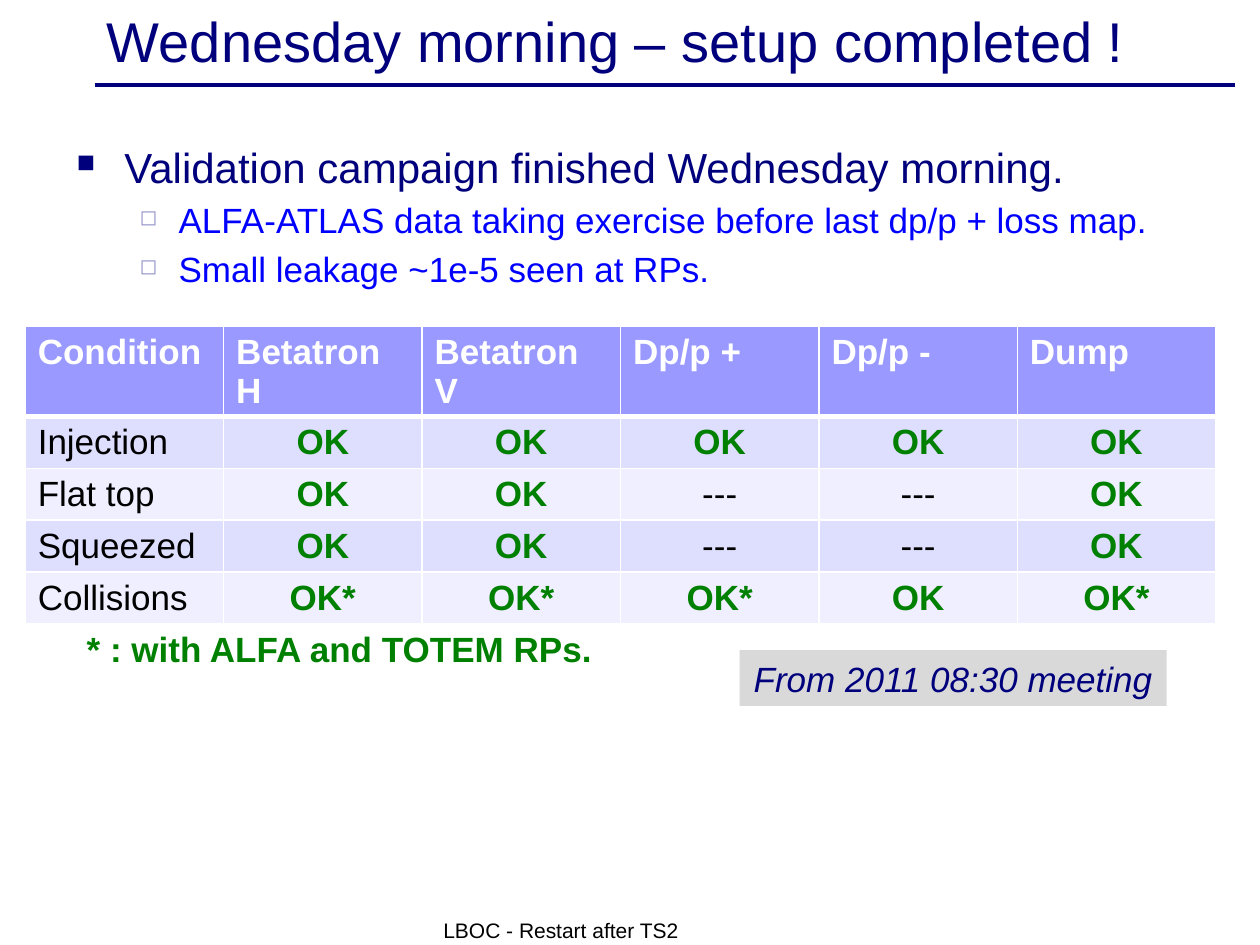
from dataclasses import dataclass

import pptx
import pptx.dml.color
import pptx.enum.shapes
import pptx.enum.text
import pptx.oxml
import pptx.oxml.ns
import pptx.util

WIDTH, HEIGHT = 10, 7.5
FONT = "Arial"
NAVY, BLUE, GREEN = "00007D", "0000FF", "008000"
BLACK, WHITE, GREY = "000000", "FFFFFF", "D9D9D9"
HEADER_FILL, BAND_FILLS = "9999FF", ("DEDEFF", "EFEFFF")
LEFT, CENTER = pptx.enum.text.PP_ALIGN.LEFT, pptx.enum.text.PP_ALIGN.CENTER
MIDDLE, BOTTOM = pptx.enum.text.MSO_ANCHOR.MIDDLE, pptx.enum.text.MSO_ANCHOR.BOTTOM


@dataclass(frozen=True)
class Area:
    left: float
    top: float
    width: float
    height: float

    def emu(self) -> tuple:
        return x(self.left), y(self.top), x(self.width), y(self.height)


@dataclass(frozen=True)
class Bullet:
    char: str
    color: str
    percent: int
    margin: float
    hanging: float


@dataclass(frozen=True)
class Line:
    text: str
    size: float
    color: str
    bullet: Bullet
    level: int = 0
    before: float = 0


def x(share: float) -> int:
    return pptx.util.Inches(WIDTH * share)


def y(share: float) -> int:
    return pptx.util.Inches(HEIGHT * share)


def rgb(color: str):
    return pptx.dml.color.RGBColor.from_string(color)


def add_xml(parent, xml: str) -> None:
    ns = pptx.oxml.ns.nsdecls("a")
    parent.append(pptx.oxml.parse_xml(xml.replace("NS", ns, 1)))


def write(p, text: str, *, size=20, color=BLACK, bold=False, italic=False,
          align=LEFT, before=0) -> None:
    p.alignment = align
    p.space_before = pptx.util.Pt(before)
    r = p.add_run()
    r.text = text
    r.font.name = FONT
    r.font.size = pptx.util.Pt(size)
    r.font.bold = bold
    r.font.italic = italic
    r.font.color.rgb = rgb(color)


def add_text(s, area: Area, text: str, *, anchor=None, wrap=True, **style) -> None:
    tf = s.shapes.add_textbox(*area.emu()).text_frame
    tf.word_wrap = wrap
    if anchor is not None:
        tf.vertical_anchor = anchor
    write(tf.paragraphs[0], text, **style)


def add_bullet(p, bullet: Bullet) -> None:
    ppr = p._p.get_or_add_pPr()
    ppr.set("marL", str(pptx.util.Inches(bullet.margin)))
    ppr.set("indent", str(-pptx.util.Inches(bullet.hanging)))
    add_xml(ppr, f'<a:buClr NS><a:srgbClr val="{bullet.color}"/></a:buClr>')
    add_xml(ppr, f'<a:buSzPct NS val="{bullet.percent * 1000}"/>')
    add_xml(ppr, f'<a:buChar NS char="{bullet.char}"/>')


def add_body(s, area: Area, lines: list[Line]) -> None:
    tf = s.shapes.add_textbox(*area.emu()).text_frame
    tf.word_wrap = True
    for i, line in enumerate(lines):
        p = tf.add_paragraph() if i else tf.paragraphs[0]
        p.level = line.level
        add_bullet(p, line.bullet)
        write(p, line.text, size=line.size, color=line.color, before=line.before)


def add_rule(s, start: float, end: float, top: float) -> None:
    c = s.shapes.add_connector(pptx.enum.shapes.MSO_CONNECTOR.STRAIGHT,
                               x(start), y(top), x(end), y(top))
    c.line.color.rgb = rgb(NAVY)
    c.line.width = pptx.util.Pt(2)
    add_xml(c._element.spPr, "<a:effectLst NS/>")


def add_label(s, area: Area, text: str, fill: str, **style) -> None:
    sp = s.shapes.add_shape(pptx.enum.shapes.MSO_SHAPE.RECTANGLE, *area.emu())
    sp.shadow.inherit = False
    sp.fill.solid()
    sp.fill.fore_color.rgb = rgb(fill)
    sp.line.fill.background()
    sp.text_frame.word_wrap = False
    write(sp.text_frame.paragraphs[0], text, align=CENTER, **style)


def format_cell(cell, row: int, fill: str) -> None:
    widths = {"L": 1, "R": 1, "T": 3 if row == 1 else 1, "B": 3 if row == 0 else 1}
    for side, width in widths.items():
        add_xml(cell._tc.get_or_add_tcPr(),
                f'<a:ln{side} NS w="{pptx.util.Pt(width)}"><a:solidFill>'
                f'<a:srgbClr val="{WHITE}"/></a:solidFill></a:ln{side}>')
    cell.margin_bottom = 0
    cell.fill.solid()
    cell.fill.fore_color.rgb = rgb(fill)


def add_results(s, area: Area, rows: list[list[str]], header_share: float) -> None:
    table = s.shapes.add_table(len(rows), len(rows[0]), *area.emu()).table
    body_share = (1 - header_share) / (len(rows) - 1)
    for i, values in enumerate(rows):
        share = body_share if i else header_share
        table.rows[i].height = y(area.height * share)
        for j, value in enumerate(values):
            cell = table.cell(i, j)
            format_cell(cell, i, BAND_FILLS[(i - 1) % 2] if i else HEADER_FILL)
            passed = value.startswith("OK")
            color = WHITE if i == 0 else GREEN if passed else BLACK
            write(cell.text_frame.paragraphs[0], value, color=color,
                  bold=i == 0 or passed, align=CENTER if i and j else LEFT)


SQUARE = Bullet("■", NAVY, 60, 0.38, 0.38)
HOLLOW = Bullet("◻", "9999CC", 62, 0.81, 0.31)
LINES = [
    Line("Validation campaign finished Wednesday morning.", 24, NAVY, SQUARE),
    Line("ALFA-ATLAS data taking exercise before last dp/p + loss map.",
         20, BLUE, HOLLOW, 1, 4),
    Line("Small leakage ~1e-5 seen at RPs.", 20, BLUE, HOLLOW, 1, 4),
]
RESULTS = [
    ["Condition", "Betatron H", "Betatron V", "Dp/p +", "Dp/p -", "Dump"],
    ["Injection", "OK", "OK", "OK", "OK", "OK"],
    ["Flat top", "OK", "OK", "---", "---", "OK"],
    ["Squeezed", "OK", "OK", "---", "---", "OK"],
    ["Collisions", "OK*", "OK*", "OK*", "OK", "OK*"],
]


def main() -> None:
    prs = pptx.Presentation()
    prs.slide_width, prs.slide_height = x(1), y(1)
    s = prs.slides.add_slide(prs.slide_layouts[6])
    add_rule(s, 0.075, 0.98, 0.09)
    add_text(s, Area(0.075, 0.004, 0.9, 0.076), "Wednesday morning – setup completed !",
             anchor=MIDDLE, size=32, color=NAVY)
    add_body(s, Area(0.051, 0.143, 0.914, 0.136), LINES)
    add_text(s, Area(0.342, 0.967, 0.317, 0.037), "LBOC - Restart after TS2",
             anchor=BOTTOM, size=12)
    add_results(s, Area(0.02, 0.345, 0.945, 0.314), RESULTS, 0.3)
    add_text(s, Area(0.059, 0.657, 0.424, 0.059), "* : with ALFA and TOTEM RPs.",
             wrap=False, color=GREEN, bold=True)
    add_label(s, Area(0.587, 0.688, 0.339, 0.059), "From 2011 08:30 meeting", GREY,
              color=NAVY, italic=True)
    prs.save("out.pptx")


if __name__ == "__main__":
    main()
